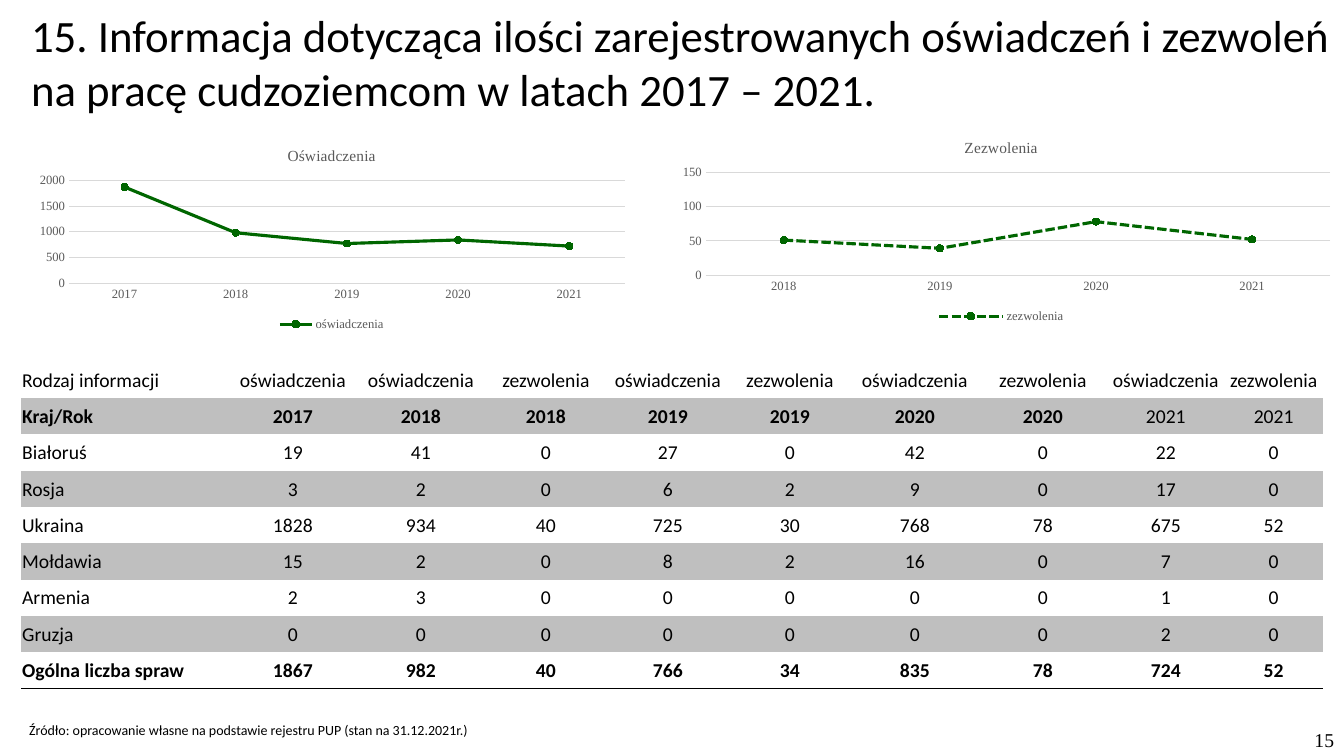
"""Slide on registered declarations and work permits for foreigners, 2017-2021."""
from lxml import etree
from pptx import Presentation
from pptx import util as u
from pptx.chart.data import CategoryChartData
from pptx.dml.color import RGBColor
from pptx.enum import chart as ch, dml, text as tx
from pptx.oxml import parse_xml
from pptx.oxml.ns import nsdecls, qn

COLORS = {"ink": "000000", "band": "BFBFBF", "label": "595959", "grid": "D9D9D9", "line": "006600"}
SANS, SERIF = "Calibri", "Times New Roman"
NO_STYLE = "{2D5ABB26-0587-4C30-8999-92F81FD0307C}"


def style_font(font, size, color="ink", name=SERIF, bold=False):
    font.size, font.name, font.bold = u.Pt(size), name, bold
    font.color.rgb = RGBColor.from_string(COLORS[color])


def write(frame, content, size=14, name=SANS, bold=False, color="ink", align=tx.PP_ALIGN.LEFT):
    frame.text = content
    paragraph = frame.paragraphs[0]
    paragraph.alignment = align
    for run in paragraph.runs:
        style_font(run.font, size, color, name, bold)


prs = Presentation()
prs.slide_width, prs.slide_height = u.Inches(13.33), u.Inches(7.5)
slide = prs.slides.add_slide(prs.slide_layouts[6])

heading = ("15. Informacja dotycząca ilości zarejestrowanych oświadczeń i zezwoleń\v"
           "na pracę cudzoziemcom w latach 2017 – 2021.")
source_note = "Źródło: opracowanie własne na podstawie rejestru PUP (stan na 31.12.2021r.)"
captions = [
    (heading, (0.21, 0.03, 13.7, 1.18), True, dict(size=32)),
    (source_note, (0.19, 7.11, 4.59, 0.4), False, dict(size=10)),
    ("15", (10.22, 7.17, 3.11, 0.52), True, dict(name=SERIF, align=tx.PP_ALIGN.RIGHT)),
]
for content, place, wrap, looks in captions:
    frame = slide.shapes.add_textbox(*map(u.Inches, place)).text_frame
    frame.word_wrap = wrap
    write(frame, content, **looks)

trends = [
    ("Oświadczenia", ["2017", "2018", "2019", "2020", "2021"], [1870, 980, 770, 840, 720],
     (0.26, 1.33, 6.06, 2), (2000, 500), (0.07, 0.91), dml.MSO_LINE.SOLID),
    ("Zezwolenia", ["2018", "2019", "2020", "2021"], [51, 39, 78, 52],
     (6.6, 1.25, 6.66, 2), (150, 50), (0.06, 0.93), dml.MSO_LINE.SQUARE_DOT),
]
for title, years, counts, place, (top, step), (plot_left, plot_width), dash in trends:
    data = CategoryChartData()
    data.categories = years
    data.add_series(title.lower(), counts)
    trend = slide.shapes.add_chart(ch.XL_CHART_TYPE.LINE_MARKERS, *map(u.Inches, place), data).chart
    style_font(trend.font, 10)
    trend.has_title = True
    write(trend.chart_title.text_frame, title, size=11, name=SERIF, color="label",
          align=tx.PP_ALIGN.CENTER)
    trend.chart_title.include_in_layout = False
    trend.has_legend = True
    trend.legend.position = ch.XL_LEGEND_POSITION.BOTTOM
    trend.legend.include_in_layout = False
    style_font(trend.legend.font, 9, "label")

    year_axis, count_axis = trend.category_axis, trend.value_axis
    for axis in (year_axis, count_axis):
        axis.major_tick_mark = axis.minor_tick_mark = ch.XL_TICK_MARK.NONE
        style_font(axis.tick_labels.font, 9, "label")
    count_axis.minimum_scale, count_axis.maximum_scale, count_axis.major_unit = 0, top, step
    count_axis.format.line.fill.background()
    for rule in (year_axis.format.line, count_axis.major_gridlines.format.line):
        rule.width = u.Pt(0.75)
        rule.color.rgb = RGBColor.from_string(COLORS["grid"])

    trend.plots[0].vary_by_categories = False
    series = trend.plots[0].series[0]
    green = RGBColor.from_string(COLORS["line"])
    series.smooth = False
    series.format.line.width = u.Pt(2.25)
    series.format.line.color.rgb = green
    series.format.line.dash_style = dash
    series.marker.style, series.marker.size = ch.XL_MARKER_STYLE.CIRCLE, 5
    series.marker.format.fill.solid()
    series.marker.format.fill.fore_color.rgb = green
    series.marker.format.line.color.rgb = green

    plot_area = trend.plots[0]._element.getparent()
    for layout in plot_area.findall(qn("c:layout")):
        plot_area.remove(layout)
    plot_area.insert(0, parse_xml(
        f'<c:layout {nsdecls("c")}><c:manualLayout><c:layoutTarget val="inner"/>'
        '<c:xMode val="edge"/><c:yMode val="edge"/>'
        f'<c:x val="{plot_left}"/><c:y val="0.23"/><c:w val="{plot_width}"/><c:h val="0.51"/>'
        '</c:manualLayout></c:layout>'))

declared, permitted = "oświadczenia", "zezwolenia"
rows = [
    ["Rodzaj informacji", declared] + [declared, permitted] * 4,
    ["Kraj/Rok", "2017", "2018", "2018", "2019", "2019", "2020", "2020", "2021", "2021"],
    ["Białoruś", 19, 41, 0, 27, 0, 42, 0, 22, 0],
    ["Rosja", 3, 2, 0, 6, 2, 9, 0, 17, 0],
    ["Ukraina", 1828, 934, 40, 725, 30, 768, 78, 675, 52],
    ["Mołdawia", 15, 2, 0, 8, 2, 16, 0, 7, 0],
    ["Armenia", 2, 3, 0, 0, 0, 0, 0, 1, 0],
    ["Gruzja", 0, 0, 0, 0, 0, 0, 0, 2, 0],
    ["Ogólna liczba spraw", 1867, 982, 40, 766, 34, 835, 78, 724, 52],
]
widths = [2.06, 1.27, 1.27, 1.21, 1.21, 1.21, 1.27, 1.27, 1.17, 0.97]
countries = slide.shapes.add_table(len(rows), len(widths), *map(u.Inches, (0.21, 3.59, 12.91, 3.23))).table
countries.first_row = countries.horz_banding = False
countries._tbl.tblPr.find(qn("a:tableStyleId")).text = NO_STYLE
for column, width in zip(countries.columns, widths):
    column.width = u.Inches(width)

last = len(rows) - 1
for r, values in enumerate(rows):
    countries.rows[r].height = u.Inches(0.36)
    for c, value in enumerate(values):
        cell = countries.cell(r, c)
        cell.margin_left = cell.margin_top = cell.margin_right = u.Inches(0.01)
        cell.margin_bottom = 0
        cell.vertical_anchor = tx.MSO_ANCHOR.MIDDLE
        write(cell.text_frame, str(value), bold=r == last or (r == 1 and c < 8),
              align=tx.PP_ALIGN.CENTER if c else tx.PP_ALIGN.LEFT)
        if r == last:
            border = etree.SubElement(cell._tc.get_or_add_tcPr(), qn("a:lnB"), w=str(u.Pt(0.5)))
            paint = etree.SubElement(border, qn("a:solidFill"))
            etree.SubElement(paint, qn("a:srgbClr"), val=COLORS["ink"])
        if r % 2:
            cell.fill.solid()
            cell.fill.fore_color.rgb = RGBColor.from_string(COLORS["band"])
        else:
            cell.fill.background()

prs.save("out.pptx")
